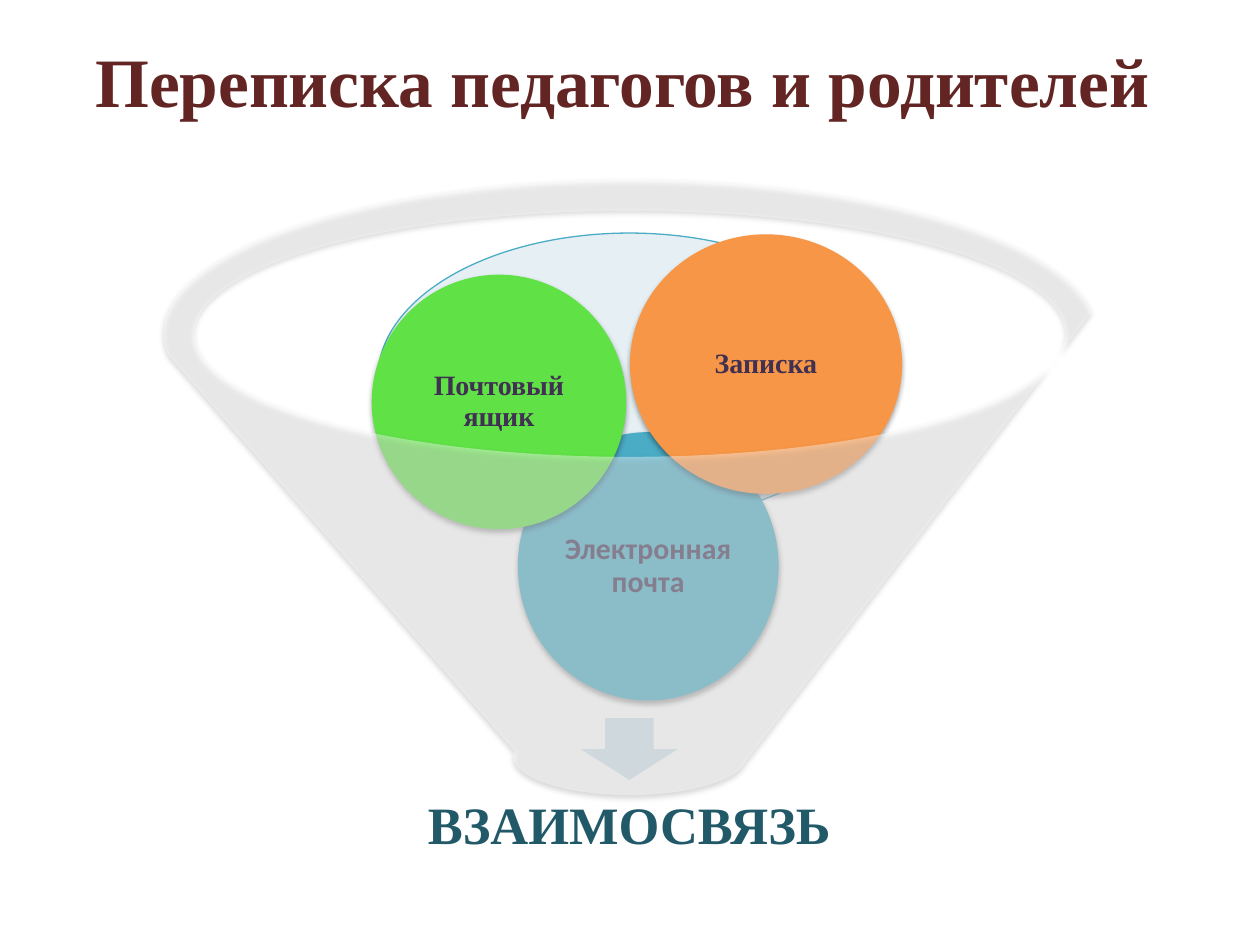
from dataclasses import dataclass
from typing import Optional

from lxml.etree import SubElement
from pptx import Presentation
from pptx.dml.color import RGBColor
from pptx.enum.shapes import MSO_SHAPE
from pptx.enum.text import MSO_ANCHOR, PP_ALIGN
from pptx.oxml.ns import qn
from pptx.util import Emu, Pt

EMU_PER_PX = 9144
COLORS = {
    "title": "632523",
    "result": "215968",
    "label": "403152",
    "rim": "C1DBE5",
    "arrow": "D0E3EA",
    "teal": "4BACC6",
    "green": "60E146",
    "orange": "F79646",
    "white": "FFFFFF",
    "black": "000000",
}
SERIF = "Times New Roman"
SANS = "Calibri"


@dataclass(frozen=True)
class Box:
    left: int
    top: int
    width: int
    height: int

    def lengths(self) -> list[Emu]:
        return [px(value) for value in (self.left, self.top, self.width, self.height)]


@dataclass(frozen=True)
class Label:
    text: str
    size: float
    color: str
    font: str = SERIF
    spacing: float = 0.9
    inset: int = 2


@dataclass(frozen=True)
class Shadow:
    opacity: int
    distance: float
    blur: float = 3.1


@dataclass(frozen=True)
class Figure:
    kind: MSO_SHAPE
    box: Box
    fill: str
    opacity: int = 100
    line: Optional[str] = None
    shadow: Optional[Shadow] = None
    label: Optional[Label] = None


@dataclass(frozen=True)
class Caption:
    box: Box
    label: Label


BALL_SHADOW = Shadow(opacity=35, distance=1.8)
CAPTIONS = [
    Caption(Box(51, 21, 900, 85),
            Label("Переписка педагогов и родителей ", 39.6, "title", spacing=1.0, inset=10)),
    Caption(Box(314, 610, 371, 93), Label("ВЗАИМОСВЯЗЬ", 30, "result", inset=23)),
]


def ball(box: Box, fill: str, text: str, size: int = 16, font: str = SERIF) -> Figure:
    return Figure(MSO_SHAPE.OVAL, box, fill, shadow=BALL_SHADOW,
                  label=Label(text, size, "label", font))


FIGURES = [
    Figure(MSO_SHAPE.OVAL, Box(300, 185, 399, 229), "rim", opacity=40, line="teal"),
    Figure(MSO_SHAPE.DOWN_ARROW, Box(461, 570, 77, 49), "arrow"),
    ball(Box(411, 343, 207, 213), "teal", "Электронная почта", 17, SANS),
    ball(Box(295, 218, 202, 202), "green", "Почтовый ящик"),
    ball(Box(500, 186, 216, 206), "orange", "Записка"),
    Figure(MSO_SHAPE.FUNNEL, Box(130, 143, 740, 488), "white", opacity=40,
           shadow=Shadow(opacity=38, distance=1.6)),
]


def px(value: int) -> Emu:
    return Emu(value * EMU_PER_PX)


def color(name: str) -> RGBColor:
    return RGBColor.from_string(COLORS[name])


def add_alpha(color_element, opacity: int) -> None:
    SubElement(color_element, qn("a:alpha"), val=str(opacity * 1000))


def write_label(shape, label: Label) -> None:
    frame = shape.text_frame
    frame.word_wrap = True
    frame.vertical_anchor = MSO_ANCHOR.MIDDLE
    frame.margin_left = frame.margin_right = px(label.inset)
    frame.margin_top = frame.margin_bottom = px(label.inset)
    paragraph = frame.paragraphs[0]
    paragraph.alignment = PP_ALIGN.CENTER
    paragraph.line_spacing = label.spacing
    run = paragraph.add_run()
    run.text = label.text
    run.font.name = label.font
    run.font.size = Pt(label.size)
    run.font.bold = True
    run.font.color.rgb = color(label.color)


def add_shadow(shape, shadow: Shadow) -> None:
    effects = shape.element.spPr.find(qn("a:effectLst"))
    outer = SubElement(effects, qn("a:outerShdw"), blurRad=str(Pt(shadow.blur)),
                       dist=str(Pt(shadow.distance)), dir="5400000", rotWithShape="0")
    tint = SubElement(outer, qn("a:srgbClr"), val=COLORS["black"])
    add_alpha(tint, shadow.opacity)


def draw_figure(slide, figure: Figure) -> None:
    shape = slide.shapes.add_shape(figure.kind, *figure.box.lengths())
    shape.shadow.inherit = False
    shape.fill.solid()
    shape.fill.fore_color.rgb = color(figure.fill)
    if figure.opacity < 100:
        fill = shape.element.spPr.find(qn("a:solidFill"))
        add_alpha(fill.find(qn("a:srgbClr")), figure.opacity)
    if figure.line:
        shape.line.color.rgb = color(figure.line)
        shape.line.width = Pt(0.75)
    else:
        shape.line.fill.background()
    if figure.shadow:
        add_shadow(shape, figure.shadow)
    if figure.label:
        write_label(shape, figure.label)


def draw_caption(slide, caption: Caption) -> None:
    write_label(slide.shapes.add_textbox(*caption.box.lengths()), caption.label)


def main() -> None:
    presentation = Presentation()
    presentation.slide_width = px(1000)
    presentation.slide_height = px(750)
    slide = presentation.slides.add_slide(presentation.slide_layouts[6])
    for caption in CAPTIONS:
        draw_caption(slide, caption)
    for figure in FIGURES:
        draw_figure(slide, figure)
    presentation.save("out.pptx")


if __name__ == "__main__":
    main()
